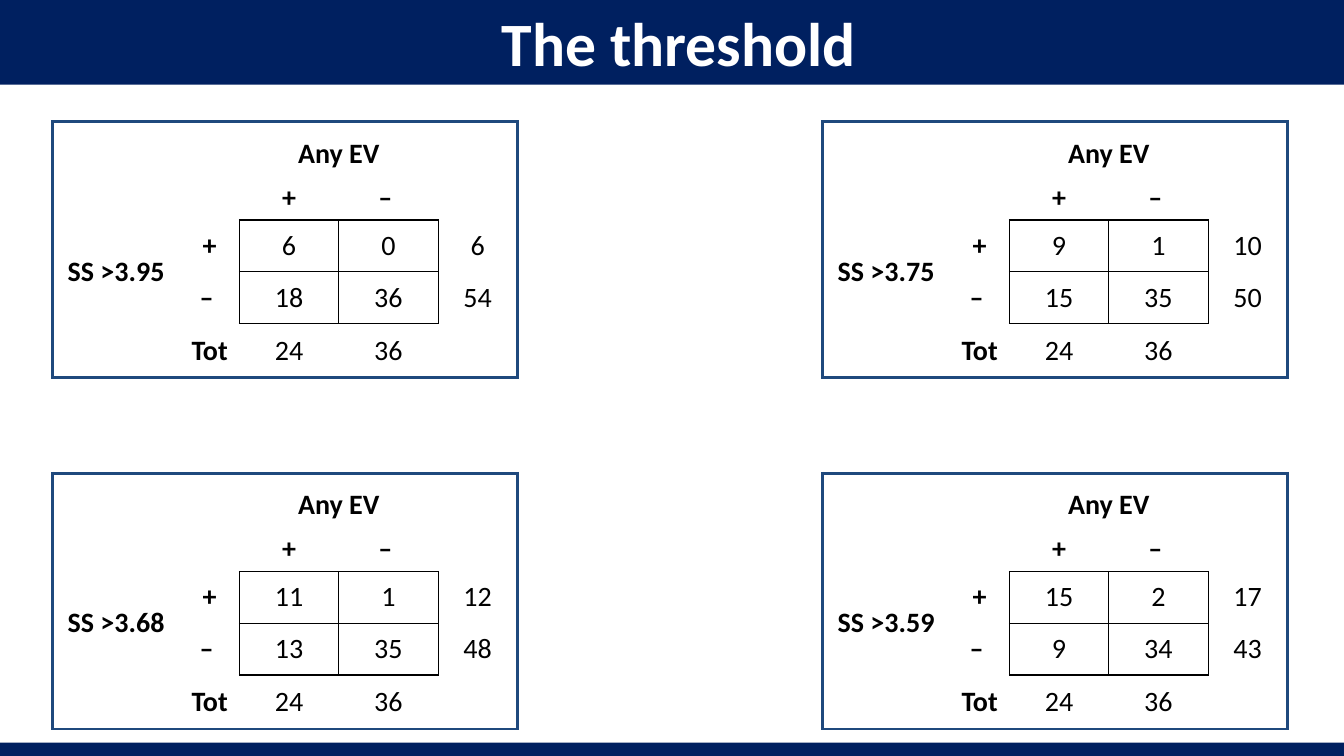
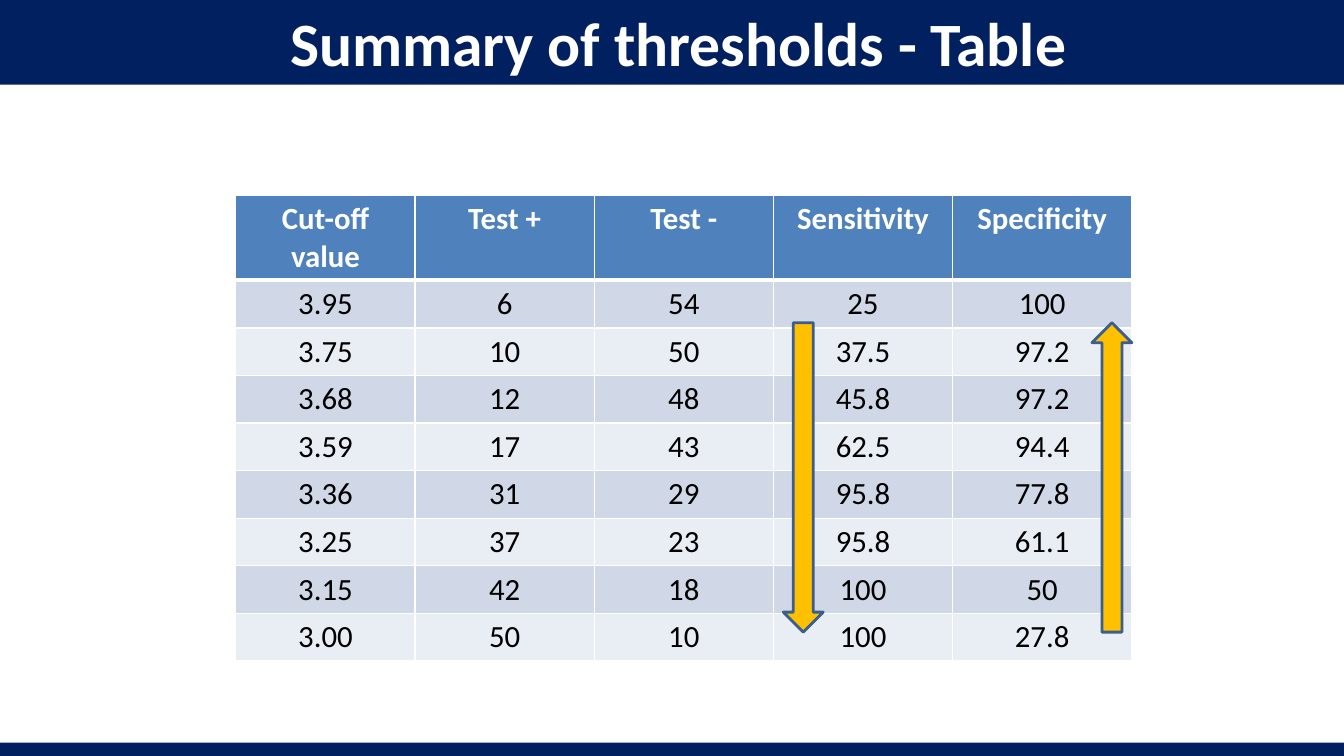
from itertools import product

from lxml import etree
from pptx import Presentation
from pptx.dml.color import RGBColor
from pptx.enum.shapes import MSO_SHAPE
from pptx.enum.text import MSO_ANCHOR, MSO_AUTO_SIZE, PP_ALIGN
from pptx.oxml.ns import qn
from pptx.util import Pt

COLORS = {
    "band": "002060", "frame": "1F497D", "header": "4F81BD",
    "row_odd": "D0D8E8", "row_even": "E9EDF4",
    "arrow": "FFC000", "arrow_edge": "3A5F8C",
    "white": "FFFFFF", "black": "000000",
}
FONT = "Calibri"
WIDTH, HEIGHT = 960, 540
TITLE_FORMAT = {"size": Pt(44), "bold": True}
NO_STYLE = "{2D5ABB26-0587-4C30-8999-92F81FD0307C}"
NEIGHBOURS = {"L": (0, -1), "R": (0, 1), "T": (-1, 0), "B": (1, 0)}

CROSS_WIDTHS = [91, 42.5, 71, 71, 56.5]
CROSS_HEIGHTS = [38.5, 31.6, 37, 37, 38.5]
CROSS_MERGES = [((0, 0), (0, 1)), ((0, 2), (0, 3)), ((1, 0), (1, 1)), ((2, 0), (3, 0))]
CROSS_LEFTS, CROSS_TOPS = (37.5, 587.5), (87, 338)
COUNT_CELLS = set(product((2, 3), (2, 3)))
CROSS_COUNTS = {
    "SS >3.95": ((6, 0), (18, 36)),
    "SS >3.75": ((9, 1), (15, 35)),
    "SS >3.68": ((11, 1), (13, 35)),
    "SS >3.59": ((15, 2), (9, 34)),
}

SUMMARY = [
    ("Cut-off value", "Test +", "Test -", "Sensitivity", "Specificity"),
    ("3.95", "6", "54", "25", "100"),
    ("3.75", "10", "50", "37.5", "97.2"),
    ("3.68", "12", "48", "45.8", "97.2"),
    ("3.59", "17", "43", "62.5", "94.4"),
    ("3.36", "31", "29", "95.8", "77.8"),
    ("3.25", "37", "23", "95.8", "61.1"),
    ("3.15", "42", "18", "100", "50"),
    ("3.00", "50", "10", "100", "27.8"),
]


def color(name):
    return RGBColor.from_string(COLORS[name])


def set_borders(cell, edges):
    """Draw edges, a dict of side to (colour name, points) or None for no line."""
    tc_pr = cell._tc.get_or_add_tcPr()
    for side, edge in edges.items():
        line = etree.SubElement(tc_pr, qn(f"a:ln{side}"))
        if edge is None:
            etree.SubElement(line, qn("a:noFill"))
            continue
        name, width = edge
        line.set("w", str(int(Pt(width))))
        fill = etree.SubElement(line, qn("a:solidFill"))
        etree.SubElement(fill, qn("a:srgbClr"), val=COLORS[name])


def cross_edge(row, column, side):
    """Frame the outside, rule the four counts, leave other edges open."""
    down, right = NEIGHBOURS[side]
    beside = row + down, column + right
    if not (0 <= beside[0] < len(CROSS_HEIGHTS) and 0 <= beside[1] < len(CROSS_WIDTHS)):
        return "frame", 2.25
    return ("black", 1) if COUNT_CELLS & {(row, column), beside} else None


class Deck:
    def __init__(self):
        self.presentation = Presentation()
        self.presentation.slide_width = Pt(WIDTH)
        self.presentation.slide_height = Pt(HEIGHT)
        self.slide = None

    def new_slide(self, title):
        self.slide = self.presentation.slides.add_slide(self.presentation.slide_layouts[5])
        band = self.slide.shapes.title
        place = {"left": 0, "top": 0, "width": Pt(WIDTH), "height": Pt(60.5)}
        for name, value in place.items():
            setattr(band, name, value)
        band.fill.solid()
        band.fill.fore_color.rgb = color("band")
        frame_format = {"auto_size": MSO_AUTO_SIZE.NONE, "margin_left": Pt(17),
                        "vertical_anchor": MSO_ANCHOR.MIDDLE, "word_wrap": True}
        for name, value in frame_format.items():
            setattr(band.text_frame, name, value)
        self.text(band.text_frame, title, "white", TITLE_FORMAT)
        self.shape(MSO_SHAPE.RECTANGLE, (0, 530.5, WIDTH, 9.5), "band")

    def text(self, frame, words, ink, font_format):
        paragraph = frame.paragraphs[0]
        paragraph.alignment = PP_ALIGN.CENTER
        run = paragraph.add_run()
        run.text = words
        run.font.color.rgb = color(ink)
        for name, value in {"name": FONT, **font_format}.items():
            setattr(run.font, name, value)

    def shape(self, kind, box, fill, edge=None, rotation=0):
        shape = self.slide.shapes.add_shape(kind, *map(Pt, box))
        shape.shadow.inherit = False
        shape.rotation = rotation
        shape.fill.solid()
        shape.fill.fore_color.rgb = color(fill)
        if edge:
            shape.line.color.rgb = color(edge)
            shape.line.width = Pt(2)
        else:
            shape.line.fill.background()

    def table(self, left, top, widths, heights):
        box = map(Pt, (left, top, sum(widths), sum(heights)))
        table = self.slide.shapes.add_table(len(heights), len(widths), *box).table
        table.first_row = table.horz_banding = False
        table._tbl.tblPr.find(qn("a:tableStyleId")).text = NO_STYLE
        for column, width in zip(table.columns, widths):
            column.width = Pt(width)
        for row, height in zip(table.rows, heights):
            row.height = Pt(height)
        return table

    def cross_table(self, left, top, label, counts):
        """Two-by-two counts of a test against EV, with computed totals."""
        table = self.table(left, top, CROSS_WIDTHS, CROSS_HEIGHTS)
        for first, last in CROSS_MERGES:
            table.cell(*first).merge(table.cell(*last))
        (a, b), (c, d) = counts
        content = [
            ("", "", "Any EV", "", ""),
            ("", "", "+", "–", ""),
            (label, "+", a, b, a + b),
            ("", "–", c, d, c + d),
            ("", "Tot", a + c, b + d, ""),
        ]
        for r, row in enumerate(content):
            for c, value in enumerate(row):
                cell = table.cell(r, c)
                set_borders(cell, {side: cross_edge(r, c, side) for side in NEIGHBOURS})
                cell.fill.background()
                cell.vertical_anchor = MSO_ANCHOR.MIDDLE if r else MSO_ANCHOR.BOTTOM
                if value == "–":
                    cell.margin_right = Pt(11.5)
                if value != "":
                    heading = isinstance(value, str)
                    self.text(cell.text_frame, str(value), "black",
                              {"size": Pt(20), "bold": heading})

    def summary_table(self, left, top, content):
        table = self.table(left, top, [128] * len(content[0]),
                           [60.5] + [34] * (len(content) - 1))
        for r, row in enumerate(content):
            header = r == 0
            fill = "header" if header else "row_odd" if r % 2 else "row_even"
            edges = dict.fromkeys(NEIGHBOURS, ("white", 1))
            if r < 2:
                edges["B" if header else "T"] = ("white", 3)
            for c, value in enumerate(row):
                cell = table.cell(r, c)
                set_borders(cell, edges)
                cell.fill.solid()
                cell.fill.fore_color.rgb = color(fill)
                self.text(cell.text_frame, value, "white" if header else "black",
                          {"size": Pt(22), "bold": header})

    def trend_arrow(self, left, rotation):
        self.shape(MSO_SHAPE.DOWN_ARROW, (left, 230.5, 28.5, 221), "arrow",
                   "arrow_edge", rotation)


def main():
    deck = Deck()

    deck.new_slide("The threshold")
    corners = product(CROSS_TOPS, CROSS_LEFTS)
    for (top, left), (label, counts) in zip(corners, CROSS_COUNTS.items()):
        deck.cross_table(left, top, label, counts)

    deck.new_slide("Summary of thresholds - Table")
    deck.summary_table(168.5, 139.5, SUMMARY)
    for left, rotation in ((559.5, 0), (780, 180)):
        deck.trend_arrow(left, rotation)

    deck.presentation.save("out.pptx")


if __name__ == "__main__":
    main()
